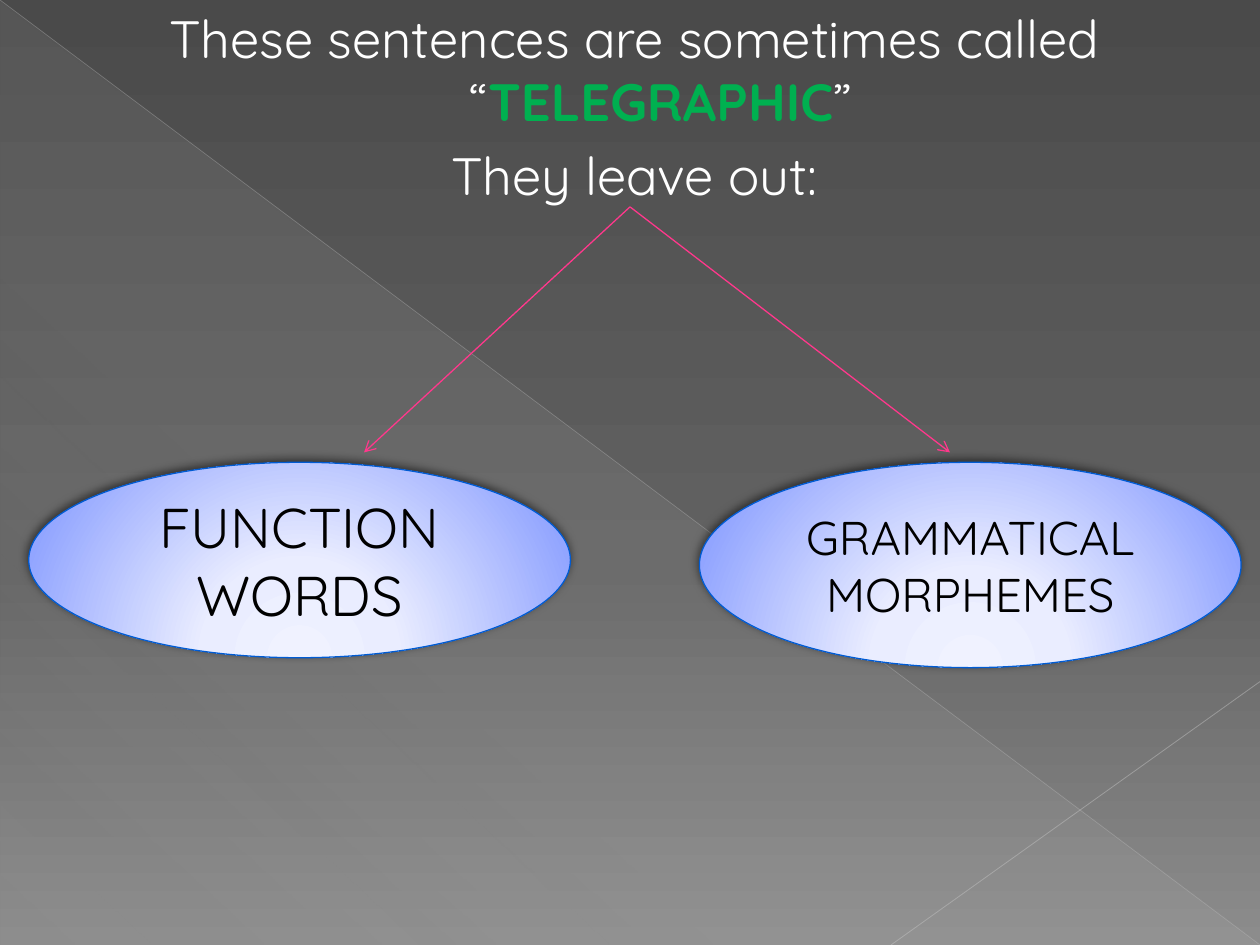
from dataclasses import dataclass

from pptx import Presentation
from pptx.dml.color import RGBColor
from pptx.enum.shapes import MSO_CONNECTOR, MSO_SHAPE
from pptx.enum.text import MSO_ANCHOR, PP_ALIGN
from pptx.oxml import parse_xml
from pptx.oxml.ns import nsdecls, qn
from pptx.util import Cm, Pt

CENTER = PP_ALIGN.CENTER
MIDDLE = MSO_ANCHOR.MIDDLE
TOP = MSO_ANCHOR.TOP
STRAIGHT = MSO_CONNECTOR.STRAIGHT
OVAL = MSO_SHAPE.OVAL
RIGHT_TRIANGLE = MSO_SHAPE.RIGHT_TRIANGLE


@dataclass(frozen=True)
class Theme:
    font: str = "Quicksand"
    heading_size: int = 30
    white: str = "FFFFFF"
    black: str = "000000"
    green: str = "00B050"
    pink: str = "FF388C"
    blue: str = "005BD3"
    backdrop: tuple = ((0, "4A4A4A", 100), (60, "626262", 100), (100, "8C8C8C", 100))
    sheen: tuple = ((0, "D2D2D2", 10), (70, "D2D2D2", 8), (100, "D2D2D2", 1))
    glow: tuple = ((0, "F0F2FF", 100), (34, "EAEDFF", 100), (100, "92A5FF", 100))


THEME = Theme()
LINEAR = '<a:lin ang="{}" scaled="0"/>'
RADIAL = ('<a:path path="circle"><a:fillToRect l="50000" t="155000" '
          'r="50000" b="-55000"/></a:path>')


def color(value):
    return RGBColor.from_string(value)


def set_gradient(fill, element, stops, direction):
    fill.solid()
    fill.fore_color.rgb = color(THEME.white)
    stop_xml = "".join(
        f'<a:gs pos="{position * 1000}"><a:srgbClr val="{value}">'
        f'<a:alpha val="{opacity * 1000}"/></a:srgbClr></a:gs>'
        for position, value, opacity in stops)
    gradient = parse_xml(f'<a:gradFill {nsdecls("a")} rotWithShape="1">'
                         f'<a:gsLst>{stop_xml}</a:gsLst>{direction}</a:gradFill>')
    solid = next(element.iter(qn("a:solidFill")))
    solid.getparent().replace(solid, gradient)


def add_line(slide, start, end, value, width, opacity=100, arrow=False):
    line = slide.shapes.add_connector(STRAIGHT, *map(Cm, start + end))
    line.line.color.rgb = color(value)
    line.line.width = Pt(width)
    properties = line.element.spPr
    outline = properties.find(qn("a:ln"))
    if opacity < 100:
        outline.find(".//" + qn("a:srgbClr")).append(
            parse_xml(f'<a:alpha {nsdecls("a")} val="{opacity * 1000}"/>'))
    if arrow:
        outline.append(parse_xml(f'<a:tailEnd {nsdecls("a")} type="arrow"/>'))
    properties.append(parse_xml(f'<a:effectLst {nsdecls("a")}/>'))


def add_run(paragraph, text, size, value, bold=False):
    run = paragraph.add_run()
    run.text = text
    run.font.name = THEME.font
    run.font.size = Pt(size)
    run.font.bold = bold
    run.font.color.rgb = color(value)


def add_backdrop(slide, box):
    left, top, width, height = box
    right, bottom = left + width, top + height
    set_gradient(slide.background.fill, slide.element, THEME.backdrop,
                 LINEAR.format(90 * 60000))
    triangle = slide.shapes.add_shape(RIGHT_TRIANGLE, *map(Cm, box))
    triangle.shadow.inherit = False
    triangle.line.fill.background()
    set_gradient(triangle.fill, triangle.element, THEME.sheen,
                 LINEAR.format(133 * 60000))
    add_line(slide, (left, top), (right, bottom), "BFBFBF", 0.39, 35)
    add_line(slide, (right, top + 13.74), (left + 17.96, bottom), "C6C6C6", 0.47, 45)


def add_heading(slide, box):
    frame = slide.shapes.add_textbox(*map(Cm, box)).text_frame
    frame.word_wrap = True
    frame.vertical_anchor = TOP
    lines = (
        (("These sentences are sometimes called “", THEME.white, False),
         ("TELEGRAPHIC", THEME.green, True),
         ("”", THEME.white, False)),
        (("They leave out:", THEME.white, False),),
    )
    for index, runs in enumerate(lines):
        paragraph = frame.add_paragraph() if index else frame.paragraphs[0]
        paragraph.alignment = CENTER
        paragraph.space_before = Pt(6 if index else 0)
        properties = paragraph._p.get_or_add_pPr()
        properties.set("marL", str(Cm(1.24)))
        properties.set("indent", str(Cm(-1.07)))
        for text, value, bold in runs:
            add_run(paragraph, text, THEME.heading_size, value, bold)


def add_branch(slide, box, text, size, fork, tip):
    add_line(slide, fork, tip, THEME.pink, 0.75, arrow=True)
    ellipse = slide.shapes.add_shape(OVAL, *map(Cm, box))
    set_gradient(ellipse.fill, ellipse.element, THEME.glow, RADIAL)
    ellipse.line.color.rgb = color(THEME.blue)
    ellipse.line.width = Pt(0.75)
    ellipse.shadow.inherit = False
    ellipse.element.spPr.find(qn("a:effectLst")).append(parse_xml(
        f'<a:outerShdw {nsdecls("a")} blurRad="{Pt(5)}" dist="{Pt(2)}" '
        f'dir="{245 * 60000}" rotWithShape="0"><a:srgbClr val="{THEME.black}">'
        '<a:alpha val="50000"/></a:srgbClr></a:outerShdw>'))
    frame = ellipse.text_frame
    frame.word_wrap = True
    frame.vertical_anchor = MIDDLE
    paragraph = frame.paragraphs[0]
    paragraph.alignment = CENTER
    add_run(paragraph, text, size, THEME.black)


def main():
    presentation = Presentation()
    presentation.slide_width = Cm(25.4)
    presentation.slide_height = Cm(19.05)
    slide = presentation.slides.add_slide(presentation.slide_layouts[6])
    page = (0, 0, 25.4, 19.05)
    fork = (12.7, 4.17)
    add_backdrop(slide, page)
    add_heading(slide, page)
    add_branch(slide, (14.1, 9.32, 10.92, 4.14), "GRAMMATICAL MORPHEMES", 27,
               fork, (19.15, 9.12))
    add_branch(slide, (0.58, 9.32, 10.92, 3.94), "FUNCTION WORDS", 32,
               fork, (7.34, 9.12))
    presentation.save("out.pptx")


if __name__ == "__main__":
    main()
